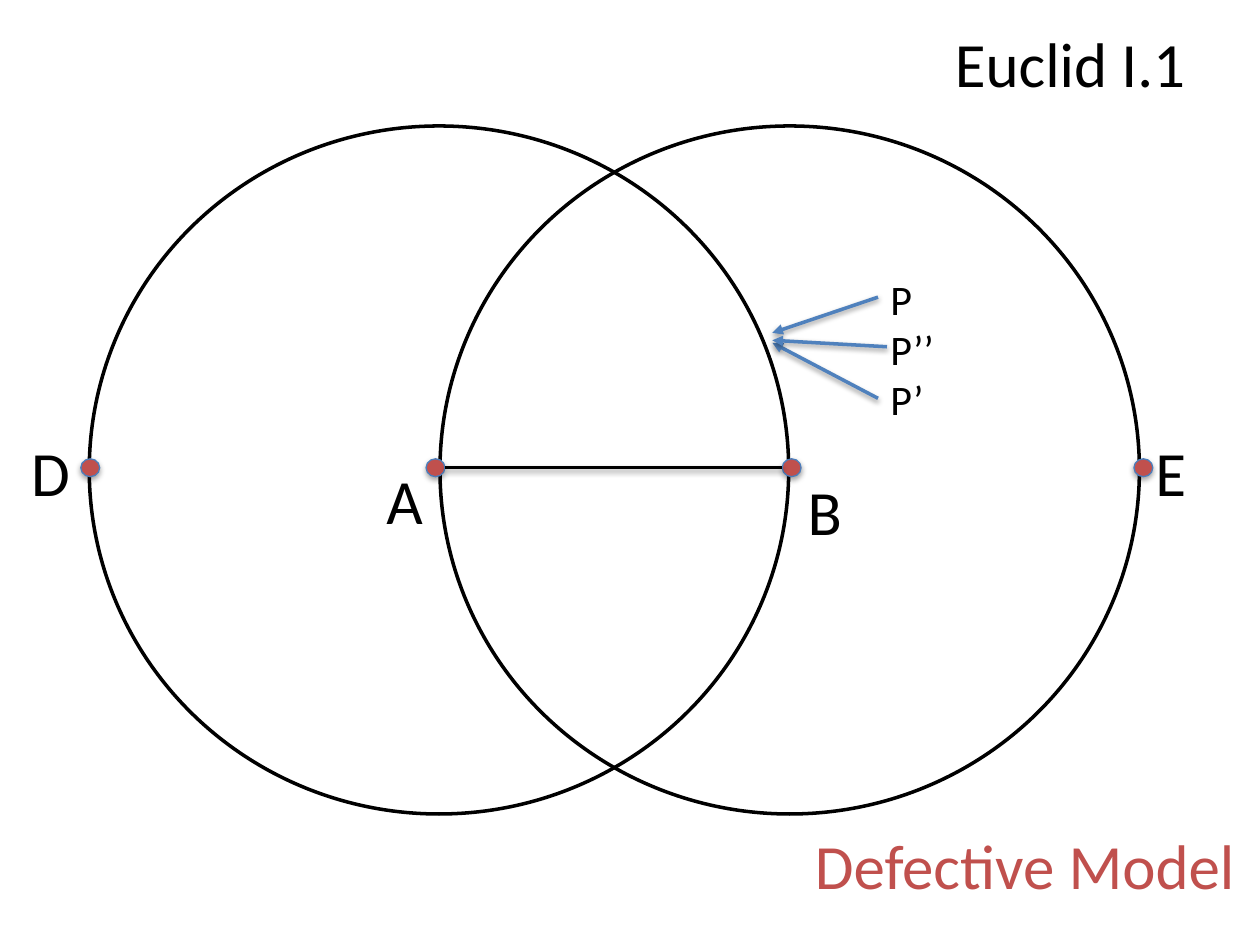
from lxml import etree
from pptx import Presentation
from pptx.dml.color import RGBColor
from pptx.enum.shapes import MSO_CONNECTOR, MSO_SHAPE
from pptx.enum.text import MSO_AUTO_SIZE
from pptx.oxml.ns import qn
from pptx.util import Cm, Pt

OVAL = MSO_SHAPE.OVAL
STRAIGHT = MSO_CONNECTOR.STRAIGHT
FIT_SHAPE = MSO_AUTO_SIZE.SHAPE_TO_FIT_TEXT
BLACK = RGBColor(0x00, 0x00, 0x00)
WHITE = RGBColor(0xFF, 0xFF, 0xFF)
RED = RGBColor(0xC0, 0x50, 0x4D)
BLUE = RGBColor(0x4F, 0x81, 0xBD)
RIM_BLUE = RGBColor(0x4B, 0x7E, 0xBC)


def cast_shadow(effects, distance, opacity):
    shadow = etree.SubElement(
        effects, qn("a:outerShdw"), blurRad=str(Pt(3.1)), dist=str(Pt(distance)),
        dir="5400000", rotWithShape="0")
    shade = etree.SubElement(shadow, qn("a:srgbClr"), val=str(BLACK))
    etree.SubElement(shade, qn("a:alpha"), val=str(opacity * 1000))


def write_label(lines, left, top, width, height=1.8, size=36, color=BLACK):
    label = slide.shapes.add_textbox(Cm(left), Cm(top), Cm(width), Cm(height))
    frame = label.text_frame
    frame.word_wrap = False
    frame.auto_size = FIT_SHAPE
    for index, line in enumerate(lines):
        paragraph = frame.add_paragraph() if index else frame.paragraphs[0]
        run = paragraph.add_run()
        run.text = line
        run.font.name = "Calibri"
        run.font.size = Pt(size)
        run.font.color.rgb = color


prs = Presentation()
prs.slide_width = Cm(25.4)
prs.slide_height = Cm(19.05)
slide = prs.slides.add_slide(prs.slide_layouts[6])

circles = slide.shapes.add_group_shape()
for left in (1.8, 8.87):
    circle = circles.shapes.add_shape(OVAL, Cm(left), Cm(2.54), Cm(14.1), Cm(13.87))
    circle.shadow.inherit = False
    if left == 1.8:
        circle.fill.solid()
        circle.fill.fore_color.rgb = WHITE
    else:
        circle.fill.background()
    circle.line.color.rgb = BLACK
    circle.line.width = Pt(2)

for letter, left, top, width in (
    ("D", 0.38, 8.61, 1.3),
    ("E", 23.04, 8.61, 1.14),
    ("B", 16.03, 9.4, 1.22),
    ("A", 7.54, 9.17, 1.27),
):
    write_label([letter], left, top, width)

for left in (8.59, 15.77, 1.63, 22.86):
    point = slide.shapes.add_shape(OVAL, Cm(left), Cm(9.25), Cm(0.38), Cm(0.36))
    point.fill.solid()
    point.fill.fore_color.rgb = RED
    point.line.color.rgb = RIM_BLUE
    point.line.width = Pt(0.75)
    point.shadow.inherit = False
    cast_shadow(point._element.spPr.find(qn("a:effectLst")), 1.8, 35)

write_label(["Euclid I.1"], 19, 0.36, 5.21)
write_label(["Defective Model"], 16.18, 16.54, 9.07, color=RED)
write_label(["P", "P’’", "P’"], 17.7, 5.38, 1.4, height=3.33, size=24)

for start_x, start_y, end_x, end_y, color, weight, is_arrow in (
    (8.97, 9.43, 15.77, 9.43, BLACK, 1.5, False),
    (17.7, 5.99, 15.57, 6.71, BLUE, 2, True),
    (17.7, 8.03, 15.57, 6.91, BLUE, 2, True),
    (17.88, 6.99, 15.57, 6.86, BLUE, 2, True),
):
    segment = slide.shapes.add_connector(
        STRAIGHT, Cm(start_x), Cm(start_y), Cm(end_x), Cm(end_y))
    segment.line.color.rgb = color
    segment.line.width = Pt(weight)
    if is_arrow:
        etree.SubElement(segment.line._get_or_add_ln(), qn("a:tailEnd"), type="triangle")
    effects = etree.SubElement(segment._element.spPr, qn("a:effectLst"))
    cast_shadow(effects, 1.6, 38)

prs.save("out.pptx")
